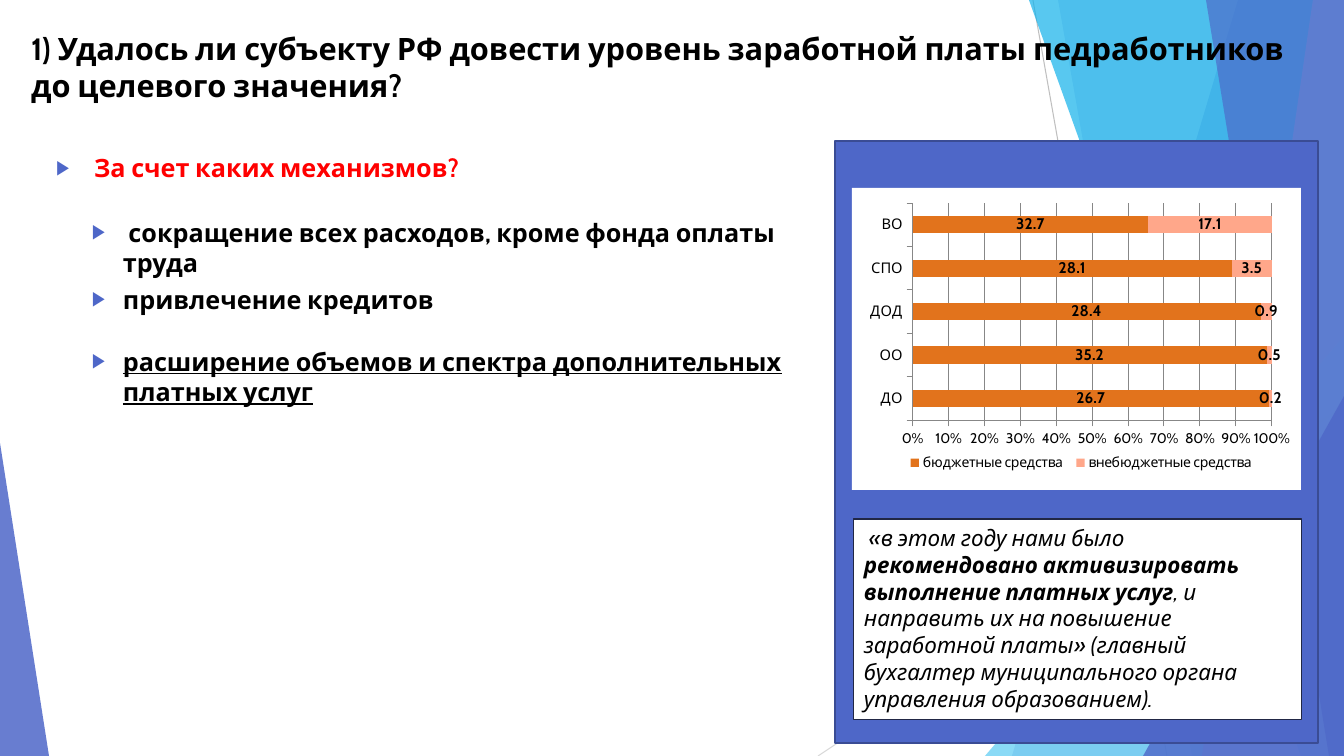
from lxml import etree
from pptx import Presentation
from pptx.chart.data import CategoryChartData
from pptx.dml.color import RGBColor
from pptx.enum.chart import XL_CHART_TYPE, XL_LABEL_POSITION, XL_LEGEND_POSITION, XL_TICK_MARK
from pptx.enum.shapes import MSO_CONNECTOR, MSO_SHAPE
from pptx.enum.text import MSO_ANCHOR, MSO_AUTO_SIZE, PP_ALIGN
from pptx.oxml import parse_xml
from pptx.oxml.ns import nsdecls, qn
from pptx.util import Emu, Pt

STACKED_BAR = XL_CHART_TYPE.BAR_STACKED_100
CENTER_LABEL = XL_LABEL_POSITION.CENTER
BOTTOM_LEGEND = XL_LEGEND_POSITION.BOTTOM
TICK_OUTSIDE = XL_TICK_MARK.OUTSIDE
STRAIGHT = MSO_CONNECTOR.STRAIGHT
RECTANGLE = MSO_SHAPE.RECTANGLE
TRIANGLE = MSO_SHAPE.ISOSCELES_TRIANGLE
TOP = MSO_ANCHOR.TOP
NO_AUTOFIT = MSO_AUTO_SIZE.NONE
LEFT = PP_ALIGN.LEFT

WIDTH, HEIGHT = 1344, 756
EMU_PER_PX = 914400 / 100.8
BLUE, CYAN, BLACK, WHITE, RED = "4E67C8", "5ECCF3", "000000", "FFFFFF", "FF0000"
GRAY = "878787"


def px(value):
    return Emu(round(value * EMU_PER_PX))


def color(value):
    return RGBColor.from_string(value)


def set_values(target, values):
    for name, value in values.items():
        setattr(target, name, value)


class SlideBuilder:
    font = "Cabin"

    def __init__(self, presentation):
        self.slide = presentation.slides.add_slide(presentation.slide_layouts[1])
        self.shapes = self.slide.shapes

    def style_font(self, font, size, hex_color=BLACK, **values):
        set_values(font, {"name": self.font, "size": Pt(size), **values})
        font.color.rgb = color(hex_color)

    def paint(self, shape, fill, opacity=100, line=None, width=1):
        shape.shadow.inherit = False
        shape.fill.solid()
        shape.fill.fore_color.rgb = color(fill)
        if opacity < 100:
            fill_color = next(shape._element.iter(qn("a:srgbClr")))
            etree.SubElement(fill_color, qn("a:alpha"), val=str(opacity * 1000))
        if line:
            shape.line.color.rgb = color(line)
            shape.line.width = Pt(width)
        else:
            shape.line.fill.background()

    def line(self, start, end, hex_color):
        connector = self.shapes.add_connector(STRAIGHT, *map(px, start + end))
        connector.line.color.rgb = color(hex_color)
        connector.line.width = Pt(0.75)
        etree.SubElement(connector._element.spPr, qn("a:effectLst"))

    def band(self, top_left, bottom_left, fill, opacity):
        builder = self.shapes.build_freeform(top_left, 0, scale=EMU_PER_PX)
        builder.add_line_segments([(WIDTH, 0), (WIDTH, HEIGHT), (bottom_left, HEIGHT)])
        self.paint(builder.convert_to_shape(), fill, opacity)

    def triangle(self, box, apex, fill, opacity):
        shape = self.shapes.add_shape(TRIANGLE, *map(px, box))
        shape.adjustments[0] = apex
        self.paint(shape, fill, opacity)

    def rectangle(self, box, fill, line, width):
        shape = self.shapes.add_shape(RECTANGLE, *map(px, box))
        self.paint(shape, fill, line=line, width=width)
        return shape

    def fill_text(self, shape, runs, size):
        frame = shape.text_frame
        set_values(frame, {"word_wrap": True, "auto_size": NO_AUTOFIT, "vertical_anchor": TOP})
        paragraph = frame.paragraphs[0]
        paragraph.alignment = LEFT
        for text, values in runs:
            run = paragraph.add_run()
            run.text = text
            self.style_font(run.font, size, **values)
        return paragraph

    def placeholder(self, index, box):
        shape = self.slide.placeholders[index]
        set_values(shape, dict(zip(("left", "top", "width", "height"), map(px, box))))
        self.shapes._spTree.append(shape._element)
        return shape

    def text_box(self, box):
        return self.shapes.add_textbox(*map(px, box))

    def bullet(self, shape, text, margin, indent, **values):
        paragraph = self.fill_text(shape, [(text, {"bold": True, **values})], 18)
        paragraph.space_before = Pt(10)
        properties = paragraph._element.get_or_add_pPr()
        properties.set("marL", str(px(margin)))
        properties.set("indent", str(px(-indent)))
        bullet_color = etree.SubElement(properties, qn("a:buClr"))
        etree.SubElement(bullet_color, qn("a:srgbClr"), val=BLUE)
        etree.SubElement(properties, qn("a:buSzPct"), val="80000")
        etree.SubElement(properties, qn("a:buFont"), typeface="Arial")
        etree.SubElement(properties, qn("a:buChar"), char="▶")

    def chart_layout(self, parent, position, bounds, inner=False):
        for existing in parent.findall(qn("c:layout")):
            parent.remove(existing)
        layout = etree.Element(qn("c:layout"))
        manual = etree.SubElement(layout, qn("c:manualLayout"))
        if inner:
            etree.SubElement(manual, qn("c:layoutTarget"), val="inner")
        for name in ("xMode", "yMode"):
            etree.SubElement(manual, qn(f"c:{name}"), val="edge")
        for name, value in zip("xywh", bounds):
            etree.SubElement(manual, qn(f"c:{name}"), val=str(value))
        parent.insert(position, layout)

    def chart(self, box, categories, series):
        data = CategoryChartData(number_format="0.0")
        data.categories = categories
        for name, values, _ in series:
            data.add_series(name, values)
        chart = self.shapes.add_chart(STACKED_BAR, *map(px, box), data).chart
        set_values(chart, {"has_title": False, "has_legend": True})
        self.style_font(chart.font, 18)
        chart._chartSpace.find(qn("c:chart")).addnext(parse_xml(
            f'<c:spPr {nsdecls("c", "a")}><a:solidFill><a:srgbClr val="{WHITE}"/></a:solidFill>'
            "<a:ln><a:noFill/></a:ln></c:spPr>"))
        set_values(chart.legend, {"position": BOTTOM_LEGEND, "include_in_layout": False})
        self.style_font(chart.legend.font, 10)
        self.chart_layout(chart.legend._element, 1, (0.11, 0.87, 0.8, 0.08))
        plot_area = chart._chartSpace.find(f'{qn("c:chart")}/{qn("c:plotArea")}')
        self.chart_layout(plot_area, 0, (0.135, 0.05, 0.8, 0.72), inner=True)
        for axis, size in ((chart.category_axis, 10.5), (chart.value_axis, 10)):
            axis.major_tick_mark = TICK_OUTSIDE
            axis.format.line.color.rgb = color(GRAY)
            self.style_font(axis.tick_labels.font, size)
        value_axis = chart.value_axis
        set_values(value_axis, {"minimum_scale": 0, "maximum_scale": 1,
                                "major_unit": 0.1, "has_major_gridlines": True})
        value_axis.major_gridlines.format.line.color.rgb = color(GRAY)
        set_values(value_axis.tick_labels, {"number_format": "0%", "number_format_is_linked": False})
        plot = chart.plots[0]
        set_values(plot, {"gap_width": 150, "overlap": 100, "vary_by_categories": False})
        for bars, (_, _, fill) in zip(plot.series, series):
            bars.format.fill.solid()
            bars.format.fill.fore_color.rgb = color(fill)
            set_values(bars.data_labels, {"show_value": True, "position": CENTER_LABEL,
                                          "number_format": "0.0", "number_format_is_linked": False})
            self.style_font(bars.data_labels.font, 11, bold=True)


def main():
    presentation = Presentation()
    set_values(presentation, {"slide_width": px(WIDTH), "slide_height": px(HEIGHT)})
    builder = SlideBuilder(presentation)

    builder.line((1033, 0), (1167, HEIGHT), "BFBFBF")
    builder.line((WIDTH, 406), (818, HEIGHT), "D9D9D9")
    builder.band(1238, 1012, BLUE, 30)
    builder.band(1058, 1192, BLUE, 20)
    builder.triangle((985, 336, 359, 420), 1, CYAN, 72)
    builder.band(1029, 1301, "12B2EB", 70)
    builder.band(1313, 1202, "95A4DE", 70)
    builder.band(1206, 1329, BLUE, 65)
    builder.triangle((1143, 396, 201, 360), 1, BLUE, 80)
    builder.triangle((0, 443, 49, 313), 0, BLUE, 85)

    title = builder.placeholder(0, (21, 25, 1280, 86))
    builder.fill_text(title, [("1) Удалось ли субъекту РФ довести уровень заработной платы "
                               "педработников до целевого значения?", {"bold": True})], 22)
    question = builder.placeholder(1, (46, 147, 806, 155))
    builder.bullet(question, "За счет каких механизмов?", 38, 38, hex_color=RED)
    mechanisms = [
        (212, 53, " сокращение всех расходов, кроме фонда оплаты труда", False),
        (279, 55, "привлечение кредитов", False),
        (341, 82, "расширение объемов и спектра дополнительных платных услуг", True),
    ]
    for top, height, text, underline in mechanisms:
        box = builder.text_box((31, top, 806, height))
        builder.bullet(box, text, 82, 31, underline=underline)

    builder.rectangle((835, 141, 483, 602), BLUE, "3A4C94", 1.5)
    quote = builder.rectangle((854, 519, 448, 201), WHITE, "212745", 0.75)
    builder.fill_text(quote, [
        (" «в этом году нами было ", {"italic": True}),
        ("рекомендовано активизировать выполнение платных услуг", {"italic": True, "bold": True}),
        (", и направить их на повышение заработной платы» (главный бухгалтер "
         "муниципального органа управления образованием).", {"italic": True}),
    ], 16)
    builder.chart((852, 188, 449, 302), ["ДО", "ОО", "ДОД", "СПО", "ВО"], [
        ("бюджетные средства", (26.7, 35.2, 28.4, 28.1, 32.7), "E2731C"),
        ("внебюджетные средства", (0.2, 0.5, 0.9, 3.5, 17.1), "FFA78A"),
    ])
    presentation.save("out.pptx")


if __name__ == "__main__":
    main()
